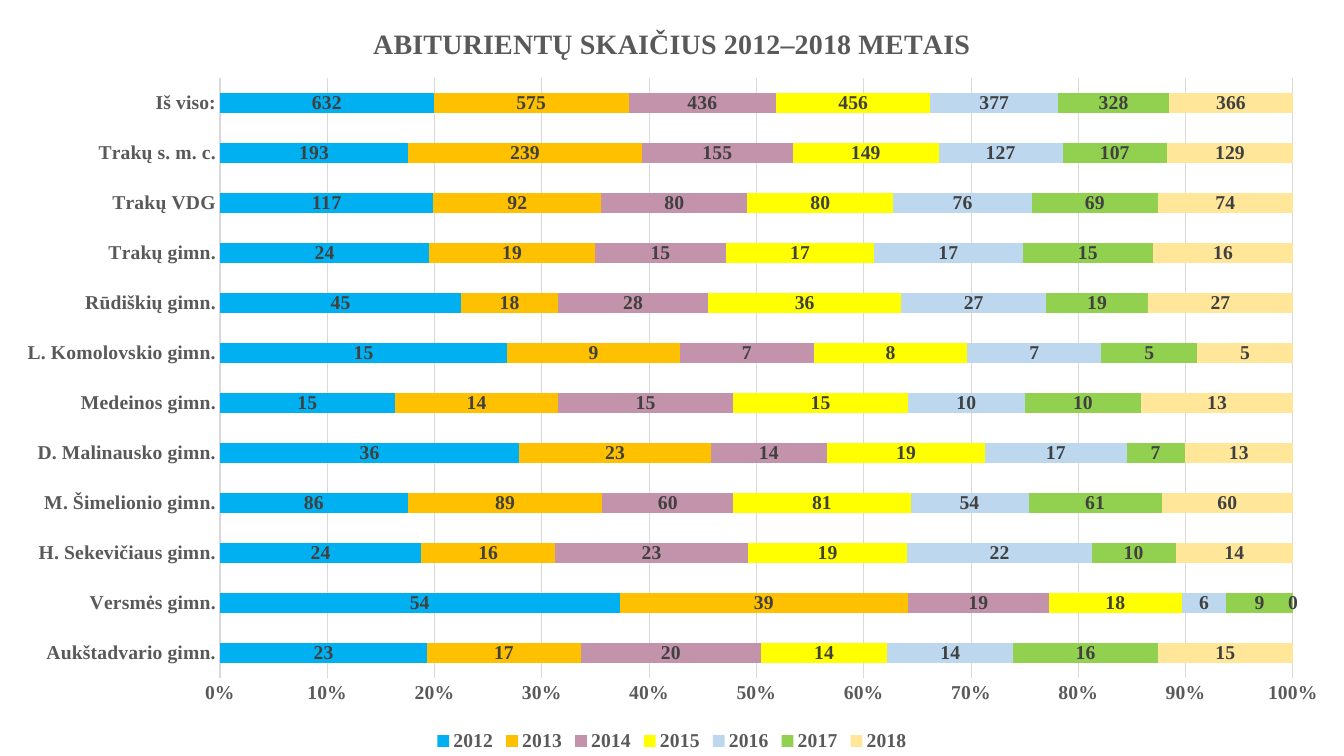
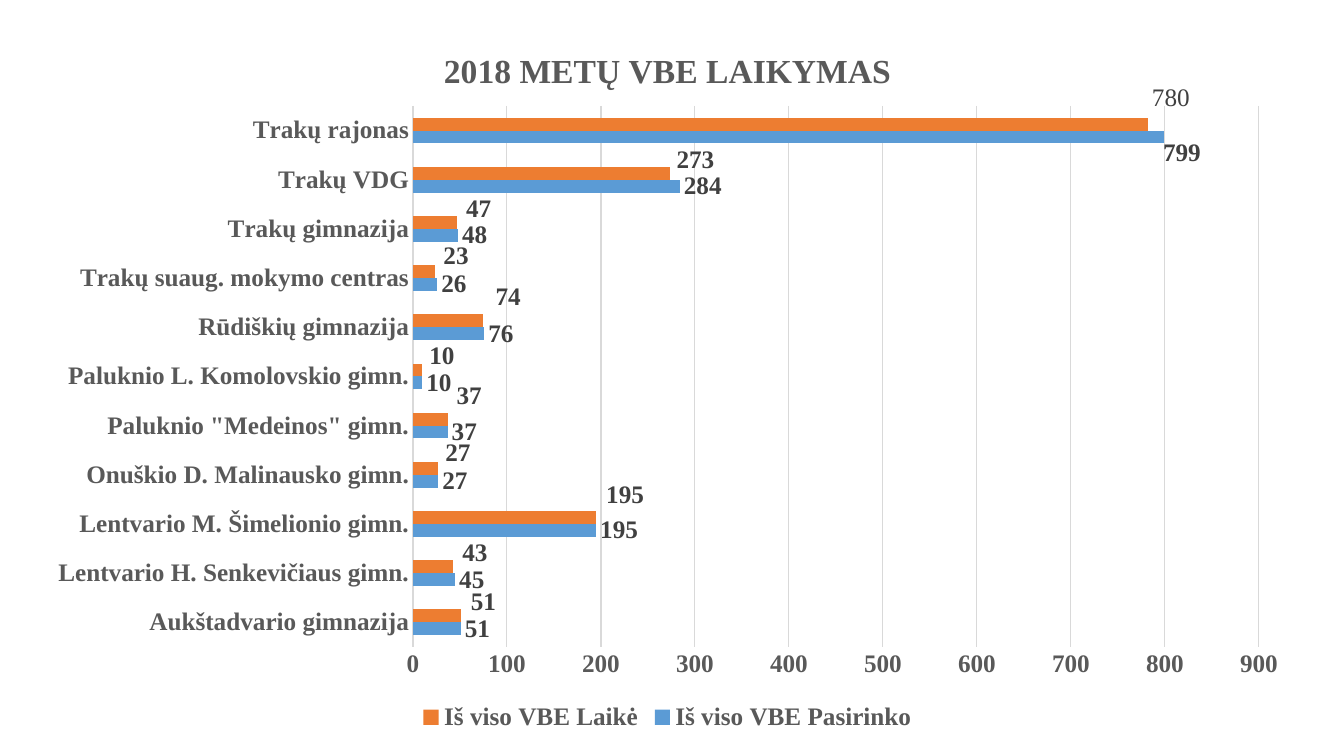
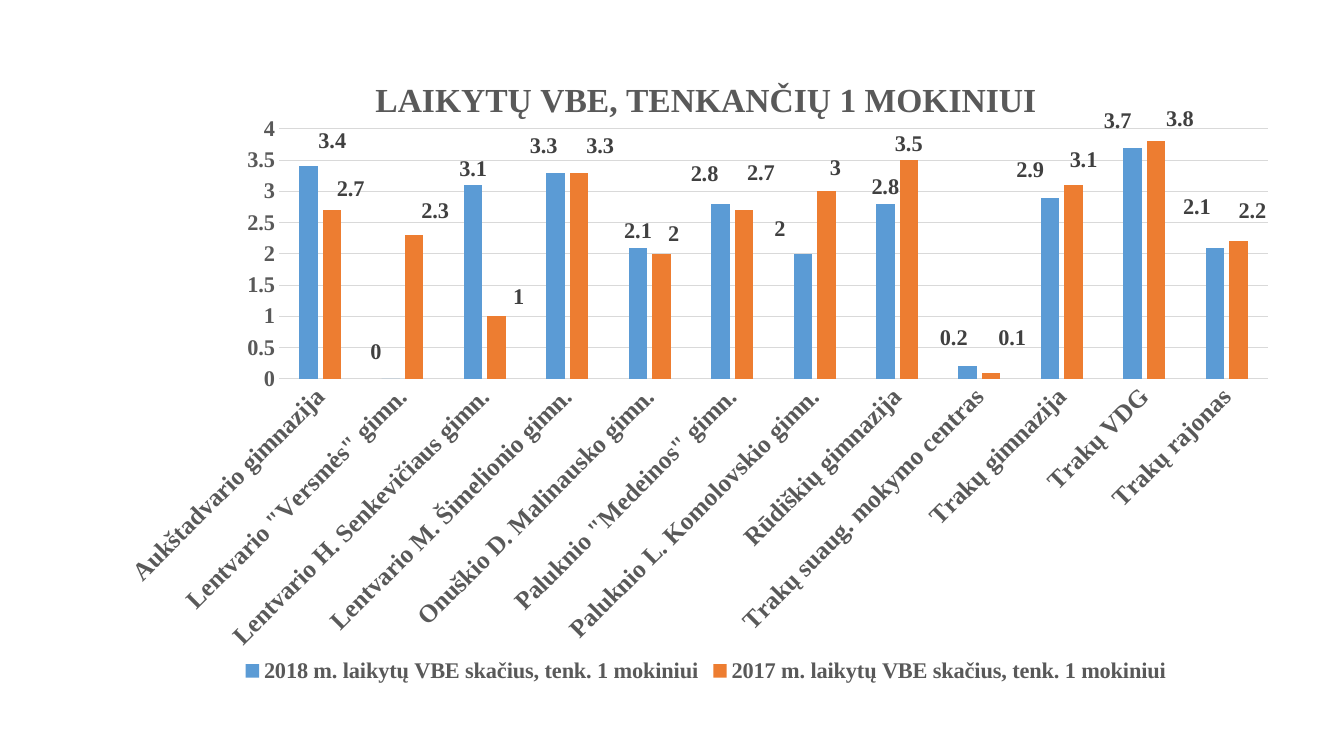
from pptx import Presentation
from pptx.chart.data import CategoryChartData as Data
from pptx.dml.color import RGBColor
from pptx.enum.chart import XL_CHART_TYPE as Kind
from pptx.enum.chart import XL_LABEL_POSITION as Spot
from pptx.enum.chart import XL_LEGEND_POSITION as Side
from pptx.enum.chart import XL_TICK_MARK as Tick
from pptx.oxml import parse_xml
from pptx.oxml.ns import nsdecls, qn
from pptx.util import Emu, Pt

SCALE = 9072
GREY, DARK, GRID = "595959", "404040", "D9D9D9"
BLUE, ORANGE = "5B9BD5", "ED7D31"
EXT = "{CE6537A1-D6FC-4f65-9D91-7224C49458BB}"
C15 = "http://schemas.microsoft.com/office/drawing/2012/chart"


def px(n):
    return Emu(n * SCALE)


def color(code):
    return RGBColor.from_string(code)


def style(font, size=18, tint=GREY, bold=True, face="Times New Roman"):
    font.size, font.bold, font.name = Pt(size), bold, face
    font.color.rgb = color(tint)


def write(frame, text, **form):
    frame.text = text
    style(frame.paragraphs[0].runs[0].font, **form)


def layout(items):
    tags = "".join(f'<c:{tag} val="{val}"/>' for tag, val in items)
    return parse_xml(f'<c:layout {nsdecls("c")}><c:manualLayout>{tags}'
                     '</c:manualLayout></c:layout>')


def unlead(node):
    for flag in node.findall(qn("c:showLeaderLines")):
        flag.set("val", "0")
    node.append(parse_xml(
        f'<c:extLst {nsdecls("c")}><c:ext uri="{EXT}" xmlns:c15="{C15}">'
        '<c15:showLeaderLines val="0"/></c:ext></c:extLst>'))


class Deck:
    def __init__(self, wide, high):
        self.show = Presentation()
        self.show.slide_width, self.show.slide_height = px(wide), px(high)

    def page(self):
        self.slide = self.show.slides.add_slide(self.show.slide_layouts[6])

    def chart(self, kind, box, plot, cats, rows, gap, lap=None):
        data = Data()
        data.categories = cats
        for name, _, vals in rows:
            data.add_series(name, vals)
        self.box = box
        shape = self.slide.shapes.add_chart(kind, *map(px, box), data)
        self.graph = shape.chart
        style(self.graph.font, 10, "000000", False, "Calibri")
        bars = self.graph.plots[0]
        bars.gap_width, bars.vary_by_categories = gap, False
        if lap is not None:
            bars.overlap = lap
        for series, (_, tint, _) in zip(bars.series, rows):
            series.format.fill.solid()
            series.format.fill.fore_color.rgb = color(tint)
            series.invert_if_negative = False
        self.place(plot)

    def place(self, plot):
        left, top, wide, high = self.box
        x, y, w, h = plot
        area = self.graph._chartSpace.chart.plotArea
        for old in area.findall(qn("c:layout")):
            area.remove(old)
        area.insert(0, layout([
            ("layoutTarget", "inner"), ("xMode", "edge"), ("yMode", "edge"),
            ("x", round((x - left) / wide, 4)),
            ("y", round((y - top) / high, 4)),
            ("w", round(w / wide, 4)), ("h", round(h / high, 4))]))

    def title(self, text, size=24):
        self.graph.has_title = True
        write(self.graph.chart_title.text_frame, text, size=size)

    def legend(self, size):
        self.graph.has_legend = True
        key = self.graph.legend
        key.position, key.include_in_layout = Side.BOTTOM, False
        style(key.font, size)

    def axes(self, cat, val, line=True, turn=None, top=None, step=None,
             form="General"):
        names, scale = self.graph.category_axis, self.graph.value_axis
        for axis, size in ((names, cat), (scale, val)):
            axis.major_tick_mark = axis.minor_tick_mark = Tick.NONE
            style(axis.tick_labels.font, size)
            axis.format.line.fill.background()
        if line:
            self.rule(names.format.line)
        if turn is not None:
            body = names._element.find(qn("c:txPr")).find(qn("a:bodyPr"))
            body.set("rot", str(turn * 60000))
        scale.has_major_gridlines = True
        self.rule(scale.major_gridlines.format.line)
        scale.tick_labels.number_format = form
        scale.tick_labels.number_format_is_linked = False
        if top:
            scale.minimum_scale, scale.maximum_scale = 0, top
            scale.major_unit = step

    def rule(self, line):
        line.color.rgb, line.width = color(GRID), Pt(0.75)

    def labels(self, size, spot):
        for series in self.graph.plots[0].series:
            tags = series.data_labels
            tags.show_value, tags.position = True, spot
            style(tags.font, size, DARK)
            unlead(tags._element)

    def shift(self, row, moves, size, texts={}):
        series = self.graph.plots[0].series[row]
        for i, (x, y) in moves.items():
            tag = series.points[i].data_label
            if i in texts:
                write(tag.text_frame, texts[i], size=size, tint=DARK,
                      bold=False)
            else:
                style(tag.font, size, DARK)
            tag.position = Spot.OUTSIDE_END
            node = tag._get_or_add_dLbl()
            for old in node.findall(qn("c:layout")):
                node.remove(old)
            node.insert(1, layout([("x", round(x / self.box[2], 4)),
                                   ("y", round(y / self.box[3], 4))]))


def years(deck):
    deck.page()
    cats = ["Aukštadvario gimn.", "Versmės gimn.", "H. Sekevičiaus gimn.",
            "M. Šimelionio gimn.", "D. Malinausko gimn.", "Medeinos gimn.",
            "L. Komolovskio gimn.", "Rūdiškių gimn.", "Trakų gimn.",
            "Trakų VDG", "Trakų s. m. c.", "Iš viso:"]
    rows = [
        ("2012", "00B0F0", [23, 54, 24, 86, 36, 15, 15, 45, 24, 117, 193, 632]),
        ("2013", "FFC000", [17, 39, 16, 89, 23, 14, 9, 18, 19, 92, 239, 575]),
        ("2014", "C393AB", [20, 19, 23, 60, 14, 15, 7, 28, 15, 80, 155, 436]),
        ("2015", "FFFF00", [14, 18, 19, 81, 19, 15, 8, 36, 17, 80, 149, 456]),
        ("2016", "BDD7EE", [14, 6, 22, 54, 17, 10, 7, 27, 17, 76, 127, 377]),
        ("2017", "92D050", [16, 9, 10, 61, 7, 10, 5, 19, 15, 69, 107, 328]),
        ("2018", "FFE699", [15, 0, 14, 60, 13, 13, 5, 27, 16, 74, 129, 366]),
    ]
    deck.chart(Kind.BAR_STACKED_100, (0, 0, 1344, 756), (220, 78, 1073, 600),
               cats, rows, 150, 100)
    deck.title("ABITURIENTŲ SKAIČIUS 2012–2018 METAIS", 20)
    deck.axes(14, 14, line=False, form="0%")
    deck.legend(14)
    deck.labels(14, Spot.CENTER)


def exams(deck):
    deck.page()
    cats = ["Aukštadvario gimnazija", "Lentvario H. Senkevičiaus gimn.",
            "Lentvario M. Šimelionio gimn.", "Onuškio D. Malinausko gimn.",
            'Paluknio "Medeinos" gimn.', "Paluknio L. Komolovskio gimn.",
            "Rūdiškių gimnazija", "Trakų suaug. mokymo centras",
            "Trakų gimnazija", "Trakų VDG", "Trakų rajonas"]
    rows = [
        ("Iš viso VBE Pasirinko", BLUE,
         [51, 45, 195, 27, 37, 10, 76, 26, 48, 284, 799]),
        ("Iš viso VBE Laikė", ORANGE,
         [51, 43, 195, 27, 37, 10, 74, 23, 47, 273, 782]),
    ]
    deck.chart(Kind.BAR_CLUSTERED, (32, 23, 1271, 713), (413, 106, 846, 541),
               cats, rows, 182)
    deck.title("2018 METŲ VBE LAIKYMAS")
    deck.axes(18, 18, top=900, step=100)
    deck.legend(18)
    deck.labels(18, Spot.OUTSIDE_END)
    deck.shift(0, {10: (-5, 16)}, 18)
    moves = [(6, -14), (5, -14), (6, -22), (3, -15), (5, -23), (3, -14),
             (9, -24), (5, -16), (5, -13), (3, -13), (0, -26)]
    deck.shift(1, dict(enumerate(moves)), 18, {10: "780"})


def ratio(deck):
    deck.page()
    cats = ["Aukštadvario gimnazija", 'Lentvario "Versmės" gimn.',
            "Lentvario H. Senkevičiaus gimn.", "Lentvario M. Šimelionio gimn.",
            "Onuškio D. Malinausko gimn.", 'Paluknio "Medeinos" gimn.',
            "Paluknio L. Komolovskio gimn.", "Rūdiškių gimnazija",
            "Trakų suaug. mokymo centras", "Trakų gimnazija", "Trakų VDG",
            "Trakų rajonas"]
    tail = "m. laikytų VBE skačius, tenk. 1 mokiniui"
    rows = [
        (f"2018 {tail}", BLUE,
         [3.4, 0, 3.1, 3.3, 2.1, 2.8, 2, 2.8, 0.2, 2.9, 3.7, 2.1]),
        (f"2017 {tail}", ORANGE,
         [2.7, 2.3, 1, 3.3, 2, 2.7, 3, 3.5, 0.1, 3.1, 3.8, 2.2]),
    ]
    deck.chart(Kind.COLUMN_CLUSTERED, (127, 54, 1157, 634),
               (278, 129, 990, 250), cats, rows, 219, -27)
    deck.title("LAIKYTŲ VBE, TENKANČIŲ 1 MOKINIUI")
    deck.axes(18, 16, turn=-45, top=4, step=0.5)
    deck.legend(16)
    deck.labels(16, Spot.OUTSIDE_END)
    deck.shift(0, {0: (24, -9), 1: (-15, -10), 3: (-12, -10), 5: (-16, -13),
                   6: (-23, -8), 8: (-14, -12), 9: (-20, -11),
                   10: (-15, -10), 11: (-18, -24)}, 16)
    deck.shift(1, {0: (19, -5), 1: (21, -8), 2: (22, -3), 3: (21, -10),
                   4: (12, -3), 5: (17, -21), 6: (9, -7), 8: (21, -18),
                   9: (10, -9), 10: (24, -6), 11: (14, -14)}, 16)


def main():
    deck = Deck(1344, 756)
    for build in (years, exams, ratio):
        build(deck)
    deck.show.save("out.pptx")


if __name__ == "__main__":
    main()
